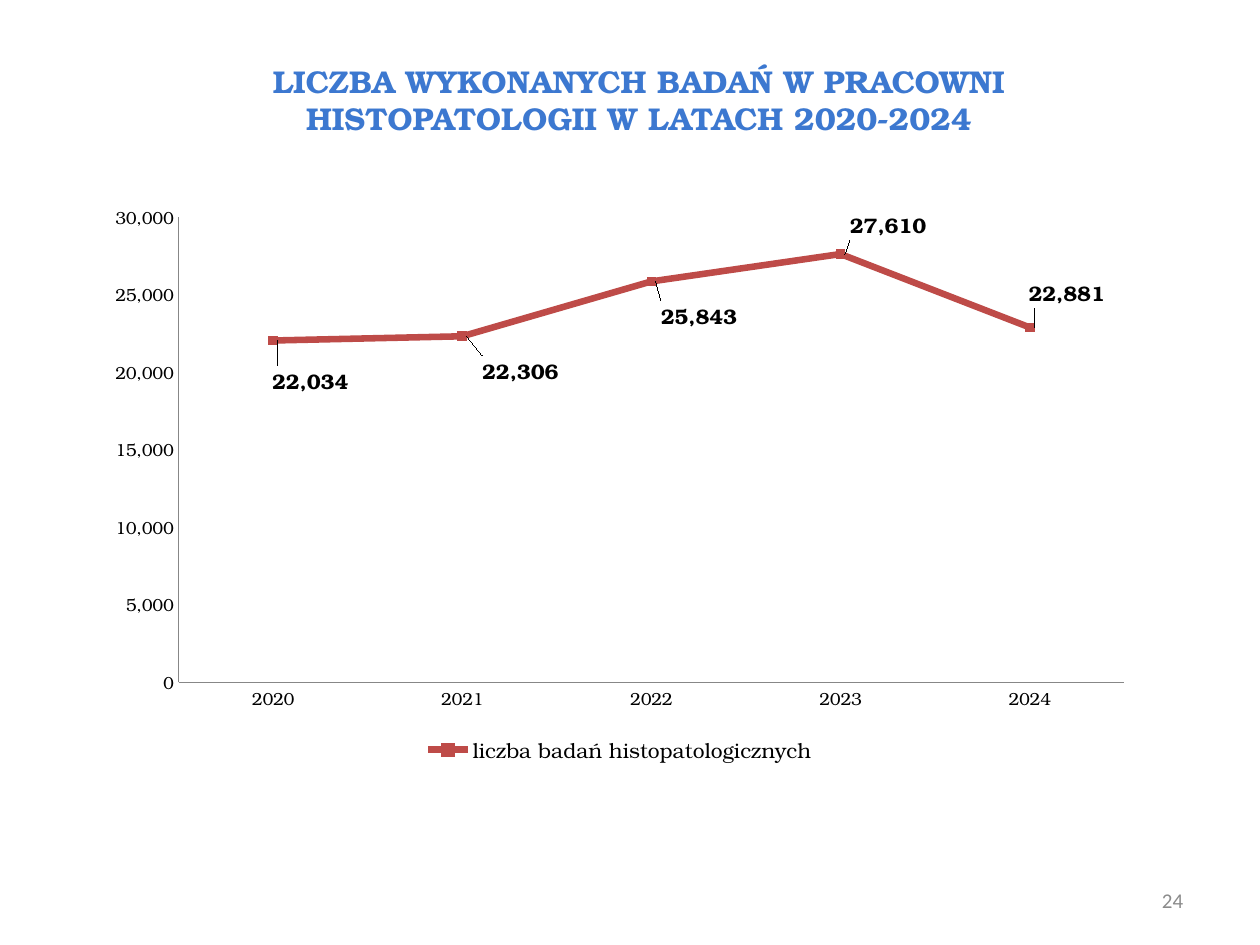
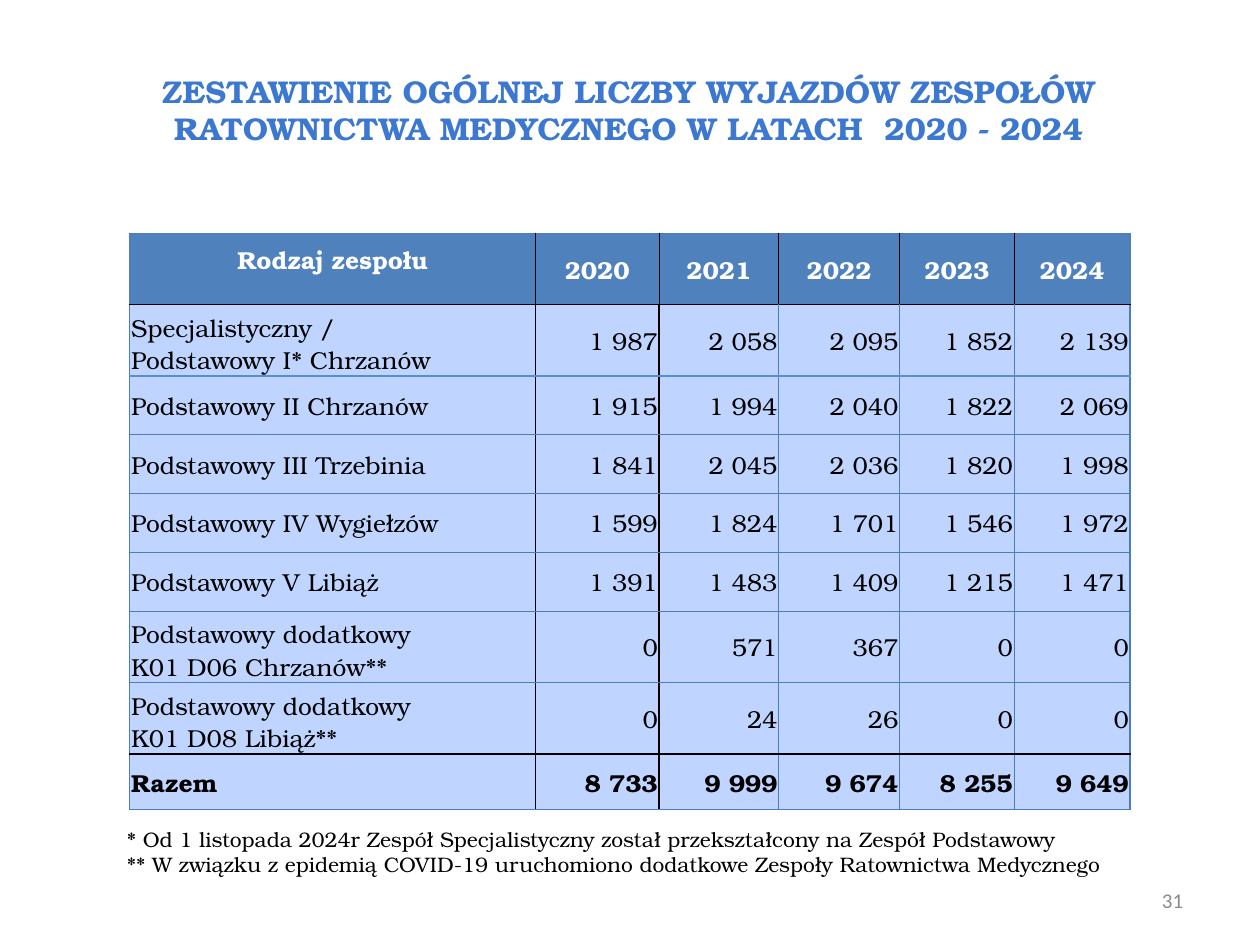
import lxml.etree
import pptx
import pptx.chart.data
import pptx.dml.color
import pptx.enum.chart
import pptx.enum.text
import pptx.oxml.ns
import pptx.util

Pt = pptx.util.Pt
RGBColor = pptx.dml.color.RGBColor
ALIGN = pptx.enum.text.PP_ALIGN
MIDDLE = pptx.enum.text.MSO_ANCHOR.MIDDLE
qn = pptx.oxml.ns.qn

# Palette and fonts
BLACK = RGBColor(0x00, 0x00, 0x00)
WHITE = RGBColor(0xFF, 0xFF, 0xFF)
TITLE_BLUE = RGBColor(0x3C, 0x78, 0xD0)
NUMBER_GREY = RGBColor(0x8B, 0x8B, 0x8B)
AXIS_GREY = RGBColor(0x87, 0x87, 0x87)
SERIES_RED = RGBColor(0xBE, 0x4B, 0x48)
HEADER_BLUE = RGBColor(0x4F, 0x81, 0xBD)
BODY_BLUE = RGBColor(0xBF, 0xD4, 0xFE)
GRID_BLUE = RGBColor(0x4A, 0x7E, 0xBB)
FIRST_ROW_BLUE = RGBColor(0x55, 0x8E, 0xD5)
SERIF = "TeX Gyre Bonum"
SANS = "Calibri"

# Table edges: colour and width
GRID = (GRID_BLUE, 0.75)
STRONG = (BLACK, 0.96)
THIN = (BLACK, 0.5)

TEST_COUNTS = {"2020": 22034, "2021": 22306, "2022": 25843,
               "2023": 27610, "2024": 22881}
# Shift of each value label, as a share of the chart's width and height
LABEL_SHIFTS = [(-0.01, 0.07), (0.01, 0.06), (0, 0.06), (0, -0.05), (-0.01, -0.06)]

DEPARTURES = [
    ("Rodzaj zespołu", "2020", "2021", "2022", "2023", "2024"),
    ("Specjalistyczny /\nPodstawowy I* Chrzanów", "1 987", "2 058", "2 095", "1 852", "2 139"),
    ("Podstawowy II Chrzanów", "1 915", "1 994", "2 040", "1 822", "2 069"),
    ("Podstawowy III Trzebinia", "1 841", "2 045", "2 036", "1 820", "1 998"),
    ("Podstawowy IV Wygiełzów", "1 599", "1 824", "1 701", "1 546", "1 972"),
    ("Podstawowy V Libiąż", "1 391", "1 483", "1 409", "1 215", "1 471"),
    ("Podstawowy dodatkowy\nK01 D06 Chrzanów**", "0", "571", "367", "0", "0"),
    ("Podstawowy dodatkowy\nK01 D08 Libiąż**", "0", "24", "26", "0", "0"),
    ("Razem", "8 733", "9 999", "9 674", "8 255", "9 649"),
]
TOTAL_ROW = len(DEPARTURES) - 1
COLUMN_WIDTHS = [231.8, 70.6, 68.4, 69.1, 65.5, 66.2]
ROW_HEIGHTS = [40.8] + [33.6] * 5 + [36, 37.4, 31.7]


def vertical_edge(row, boundary):
    """Edge left of the column numbered boundary."""
    if boundary in (0, len(COLUMN_WIDTHS)):
        return GRID
    if boundary == 1:
        return STRONG
    if row == 0:
        return THIN
    return STRONG if boundary == 2 else GRID


def horizontal_edge(boundary):
    """Edge above the row numbered boundary."""
    if boundary in (1, TOTAL_ROW):
        return STRONG
    return (FIRST_ROW_BLUE, 0.96) if boundary == 2 else GRID


class Deck:
    """Holds the shared style and the slide being built."""

    def __init__(self):
        self.presentation = pptx.Presentation()
        self.presentation.slide_width = Pt(720)
        self.presentation.slide_height = Pt(540)
        self.slide = None

    def new_slide(self):
        self.slide = self.presentation.slides.add_slide(self.presentation.slide_layouts[6])

    def style(self, font, size, color, bold=False, name=SERIF):
        font.name, font.size, font.bold = name, Pt(size), bold
        font.color.rgb = color

    def add_lines(self, frame, text, size, color, align=ALIGN.LEFT, bold=False, name=SERIF):
        frame.word_wrap = True
        for index, line in enumerate(text.split("\n")):
            paragraph = frame.add_paragraph() if index else frame.paragraphs[0]
            paragraph.alignment = align
            run = paragraph.add_run()
            run.text = line
            self.style(run.font, size, color, bold, name)

    def text(self, box, text, size, color, **style):
        frame = self.slide.shapes.add_textbox(*map(Pt, box)).text_frame
        self.add_lines(frame, text, size, color, **style)
        return frame

    def title(self, box, text):
        self.text(box, text, 18, TITLE_BLUE, align=ALIGN.CENTER, bold=True)

    def page_number(self, number):
        frame = self.text((516.2, 500.4, 167, 28), number, 12, NUMBER_GREY,
                          align=ALIGN.RIGHT, name=SANS)
        frame.vertical_anchor = MIDDLE

    def place(self, parent, position, **values):
        """Adds a manual layout to a chart part."""
        layout = parent.find(qn("c:layout"))
        if layout is None:
            layout = lxml.etree.Element(qn("c:layout"))
            parent.insert(position, layout)
        manual = lxml.etree.SubElement(layout, qn("c:manualLayout"))
        for tag, value in values.items():
            lxml.etree.SubElement(manual, qn("c:" + tag)).set("val", str(value))

    def line_chart(self, box, name, counts, label_shifts):
        chart_enum = pptx.enum.chart
        data = pptx.chart.data.CategoryChartData(number_format="#,##0")
        data.categories = list(counts)
        data.add_series(name, list(counts.values()))
        chart = self.slide.shapes.add_chart(
            chart_enum.XL_CHART_TYPE.LINE_MARKERS, *map(Pt, box), data).chart
        self.style(chart.font, 10, BLACK, name="Arial")
        chart.has_title = False
        self.place(chart.plots[0]._element.getparent(), 0, layoutTarget="inner",
                   xMode="edge", yMode="edge", x=0.08, y=0.04, w=0.9, h=0.81)

        # Legend
        chart.has_legend = True
        chart.legend.position = chart_enum.XL_LEGEND_POSITION.BOTTOM
        chart.legend.include_in_layout = False
        self.style(chart.legend.font, 12, BLACK)

        # Axes
        for axis in (chart.category_axis, chart.value_axis):
            axis.has_major_gridlines = False
            axis.major_tick_mark = chart_enum.XL_TICK_MARK.NONE
            axis.minor_tick_mark = chart_enum.XL_TICK_MARK.NONE
            axis.format.line.color.rgb = AXIS_GREY
            axis.format.line.width = Pt(0.75)
            self.style(axis.tick_labels.font, 10, BLACK)
        scale = chart.value_axis
        scale.minimum_scale, scale.maximum_scale, scale.major_unit = 0, 30000, 5000
        scale.tick_labels.number_format = "#,##0"
        scale.tick_labels.number_format_is_linked = False

        # Line and markers
        chart.plots[0].vary_by_categories = False
        series = chart.plots[0].series[0]
        series.smooth = False
        series.format.line.color.rgb = SERIES_RED
        series.format.line.width = Pt(3.75)
        series.marker.style = chart_enum.XL_MARKER_STYLE.SQUARE
        series.marker.size = 5
        series.marker.format.fill.solid()
        series.marker.format.fill.fore_color.rgb = SERIES_RED
        series.marker.format.line.color.rgb = SERIES_RED

        # Value labels
        labels = series.data_labels
        labels.show_value = True
        labels.number_format = "#,##0"
        labels.number_format_is_linked = False
        labels.position = chart_enum.XL_LABEL_POSITION.RIGHT
        self.style(labels.font, 12, BLACK, bold=True)
        for index, (x, y) in enumerate(label_shifts):
            label = series.points[index].data_label
            self.style(label.font, 12, BLACK, bold=True)
            label.position = chart_enum.XL_LABEL_POSITION.RIGHT
            self.place(labels._element.findall(qn("c:dLbl"))[index], 1, x=x, y=y)

    def border(self, cell, side, edge):
        color, width = edge
        line = lxml.etree.SubElement(cell._tc.get_or_add_tcPr(), qn("a:ln" + side),
                                     w=str(int(Pt(width))))
        fill = lxml.etree.SubElement(line, qn("a:solidFill"))
        lxml.etree.SubElement(fill, qn("a:srgbClr"), val=str(color))

    def table(self, left, top, rows):
        table = self.slide.shapes.add_table(
            len(rows), len(COLUMN_WIDTHS), Pt(left), Pt(top),
            Pt(sum(COLUMN_WIDTHS)), Pt(sum(ROW_HEIGHTS))).table
        table.horz_banding = False
        for column, width in zip(table.columns, COLUMN_WIDTHS):
            column.width = Pt(width)
        for row, height in zip(table.rows, ROW_HEIGHTS):
            row.height = Pt(height)
        for r, values in enumerate(rows):
            for c, value in enumerate(values):
                cell = table.cell(r, c)
                header = r == 0
                align = ALIGN.CENTER if header else ALIGN.RIGHT if c else ALIGN.LEFT
                self.add_lines(cell.text_frame, value, 14, WHITE if header else BLACK,
                               align=align, bold=r in (0, TOTAL_ROW))
                cell.vertical_anchor = MIDDLE
                cell.margin_left = cell.margin_right = Pt(0.75)
                self.border(cell, "L", vertical_edge(r, c))
                self.border(cell, "R", vertical_edge(r, c + 1))
                self.border(cell, "T", horizontal_edge(r))
                self.border(cell, "B", horizontal_edge(r + 1))
                cell.fill.solid()
                cell.fill.fore_color.rgb = HEADER_BLUE if header else BODY_BLUE
        # The first heading sits above the middle of its row
        table.cell(0, 0).margin_bottom = Pt(15)


def main():
    deck = Deck()

    # Histopathology tests
    deck.new_slide()
    deck.page_number("24")
    deck.title((70.6, 31.7, 589, 50.4),
               "LICZBA WYKONANYCH BADAŃ W PRACOWNI HISTOPATOLOGII W LATACH 2020-2024")
    deck.line_chart((54, 110.9, 600.5, 328.3), "liczba badań histopatologicznych",
                    TEST_COUNTS, LABEL_SHIFTS)

    # Ambulance team departures
    deck.new_slide()
    deck.table(74.2, 133.2, DEPARTURES)
    deck.page_number("31")
    deck.text((65.5, 468.7, 583.2, 36),
              "* Od 1 listopada 2024r Zespół Specjalistyczny został przekształcony"
              " na Zespół Podstawowy\n"
              "** W związku z epidemią COVID-19 uruchomiono dodatkowe Zespoły"
              " Ratownictwa Medycznego", 12, BLACK)
    deck.title((76.3, 37.4, 566, 50.4),
               "ZESTAWIENIE OGÓLNEJ LICZBY WYJAZDÓW ZESPOŁÓW"
               " RATOWNICTWA MEDYCZNEGO W LATACH  2020 - 2024")

    deck.presentation.save("out.pptx")


if __name__ == "__main__":
    main()
